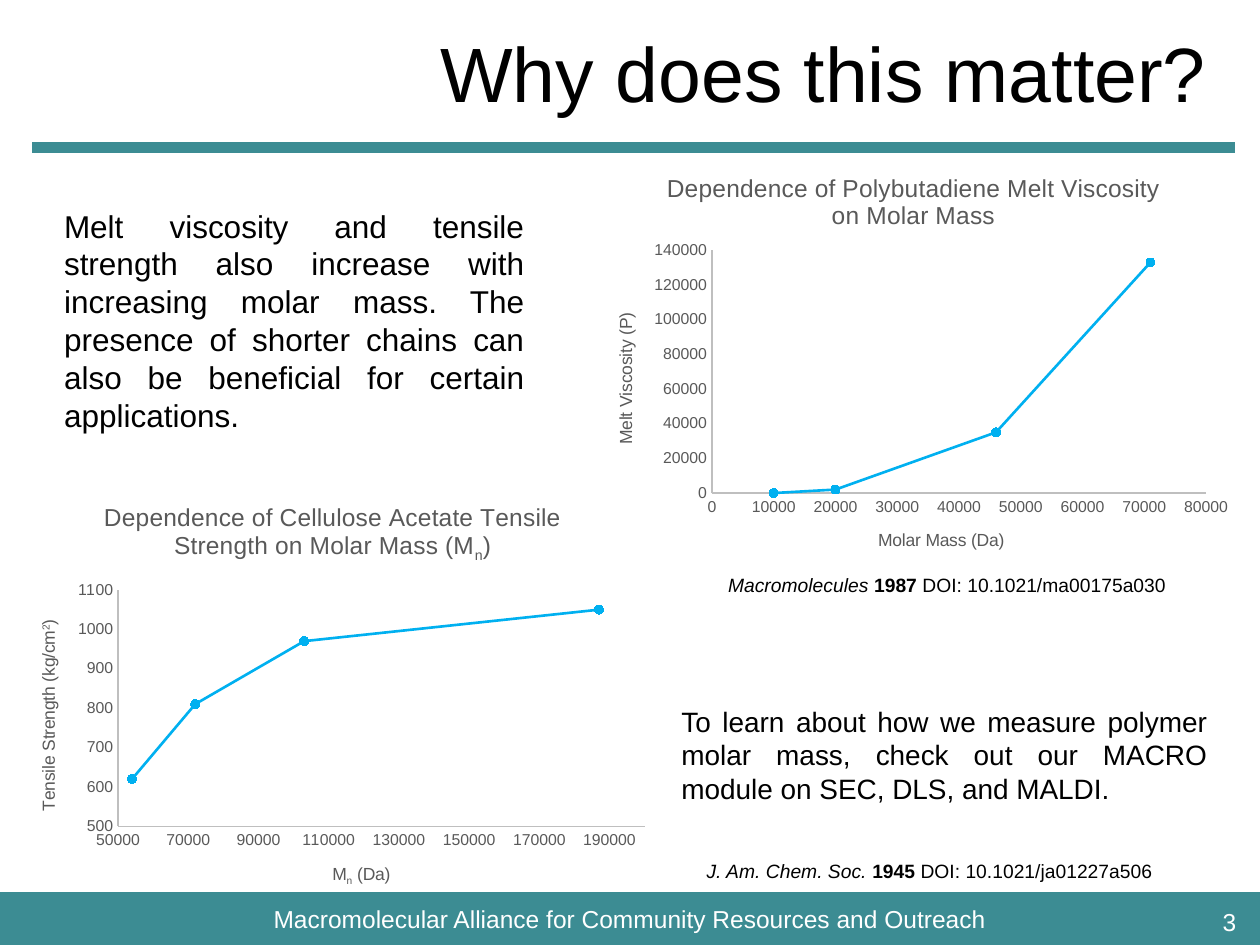
from lxml.etree import SubElement
from pptx import Presentation
from pptx.chart.data import XyChartData
from pptx.dml.color import RGBColor
from pptx.enum.chart import XL_CHART_TYPE as ChartType, XL_MARKER_STYLE as Marker, XL_TICK_MARK as Tick
from pptx.enum.shapes import MSO_CONNECTOR as Connector, MSO_SHAPE as Shape
from pptx.enum.text import MSO_ANCHOR as Anchor, PP_ALIGN as Align
from pptx.oxml.ns import qn
from pptx.util import Inches, Pt

FONT = "Arial"
TEAL, BLUE, GREY, AXIS = "3C8C93", "00B0F0", "595959", "BFBFBF"
BLACK, WHITE = "000000", "FFFFFF"
rgb = RGBColor.from_string

deck = Presentation()
deck.slide_width, deck.slide_height = Inches(10), Inches(7.5)
slide = deck.slides.add_slide(deck.slide_layouts[5])
shapes = slide.shapes


def share(left, top, width, height):
    """Turn percentages of the slide's width and height into lengths."""
    across, down = deck.slide_width / 100, deck.slide_height / 100
    return [round(n) for n in (left * across, top * down, width * across, height * down)]


def add_runs(paragraph, runs, size, color):
    """Add (text, style) runs; style is "", "bold", "italic", "sub" or "super"."""
    for text, style in runs:
        run = paragraph.add_run()
        run.text = text
        font = run.font
        font.name, font.size = FONT, Pt(size)
        font.bold, font.italic = style == "bold", style == "italic"
        font.color.rgb = rgb(color)
        if style in ("sub", "super"):
            font._element.set("baseline", "-25000" if style == "sub" else "30000")


# Title, rule and footer band
title = shapes.title
title.left, title.top, title.width, title.height = share(6.8, 2.27, 90, 10.67)
title.text_frame.vertical_anchor = Anchor.MIDDLE
heading = title.text_frame.paragraphs[0]
heading.alignment = Align.RIGHT
add_runs(heading, [("Why does this matter?", "")], 44, BLACK)

left, top, width, _ = share(2.5, 15.6, 95.5, 0)
rule = shapes.add_connector(Connector.STRAIGHT, left + width, top, left, top)
rule.line.color.rgb = rgb(TEAL)
rule.line.width = Pt(6)
SubElement(rule._element.spPr, qn("a:effectLst"))

footer = shapes.add_shape(Shape.RECTANGLE, *share(0, 94.4, 100, 5.6))
footer.shadow.inherit = False
footer.fill.solid()
footer.fill.fore_color.rgb = rgb(TEAL)
footer.line.fill.background()
footer.text_frame.vertical_anchor = Anchor.MIDDLE
alliance = footer.text_frame.paragraphs[0]
alliance.alignment = Align.CENTER
add_runs(alliance, [("Macromolecular Alliance for Community Resources and Outreach", "")], 14, WHITE)

# Charts: place, title, axis titles, points, x range, y minimum, plot area as shares of the chart
studies = [
    ((0.6, 51.07, 51.6, 45.47),
     [("Dependence of Cellulose Acetate Tensile Strength on Molar Mass (M", ""), ("n", "sub"), (")", "")],
     [("M", ""), ("n", "sub"), (" (Da)", "")],
     [("Tensile Strength (kg/cm", ""), ("2", "super"), (")", "")],
     [(54000, 620), (72000, 810), (103000, 970), (187000, 1050)],
     (50000, 200000, 20000), (500, 1100, 100), (0.17, 0.25, 0.81, 0.55)),
    ((46.7, 16.13, 51.6, 45.07),
     [("Dependence of Polybutadiene Melt Viscosity on Molar Mass", "")],
     [("Molar Mass (Da)", "")],
     [("Melt Viscosity (P)", "")],
     [(10000, 0), (20000, 2000), (46000, 35000), (71000, 133000)],
     (0, 80000, 10000), (0, 140000, 20000), (0.19, 0.23, 0.76, 0.57)),
]
for place, name, x_name, y_name, points, x_scale, y_scale, plot_area in studies:
    data = XyChartData()
    measured = data.add_series("Series 1")
    for x, y in points:
        measured.add_data_point(x, y)
    chart = shapes.add_chart(ChartType.XY_SCATTER_SMOOTH, *share(*place), data).chart
    chart.font.name, chart.font.size = FONT, Pt(10)
    chart.has_legend = False
    add_runs(chart.chart_title.text_frame.paragraphs[0], name, 14, GREY)
    chart.chart_title.include_in_layout = False

    for axis, axis_name, scale in ((chart.category_axis, x_name, x_scale),
                                   (chart.value_axis, y_name, y_scale)):
        axis.minimum_scale, axis.maximum_scale, axis.major_unit = scale
        axis.has_major_gridlines = False
        axis.major_tick_mark = axis.minor_tick_mark = Tick.NONE
        axis.format.line.color.rgb = rgb(AXIS)
        axis.format.line.width = Pt(0.75)
        labels = axis.tick_labels
        labels.font.name, labels.font.size = FONT, Pt(9)
        labels.font.color.rgb = rgb(GREY)
        labels.number_format, labels.number_format_is_linked = "General", False
        add_runs(axis.axis_title.text_frame.paragraphs[0], axis_name, 10, GREY)

    plot = chart.plots[0]
    plot.vary_by_categories = False
    curve = plot.series[0]
    curve.smooth = True
    curve.format.line.color.rgb = rgb(BLUE)
    curve.format.line.width = Pt(1.5)
    curve.marker.style, curve.marker.size = Marker.CIRCLE, 5
    curve.marker.format.fill.solid()
    curve.marker.format.fill.fore_color.rgb = rgb(BLUE)
    curve.marker.format.line.color.rgb = rgb(BLUE)

    area = chart._chartSpace.chart.plotArea
    for old in area.findall(qn("c:layout")):
        area.remove(old)
    layout = SubElement(area, qn("c:layout"))
    area.insert(0, layout)
    manual = SubElement(layout, qn("c:manualLayout"))
    settings = [("layoutTarget", "inner"), ("xMode", "edge"), ("yMode", "edge"),
                *zip("xywh", plot_area)]
    for tag, value in settings:
        SubElement(manual, qn(f"c:{tag}")).set("val", str(value))

# Body text, citations and page number
passages = [
    ((4.1, 21.2, 38.5, 25.6), Align.JUSTIFY, 18, BLACK, True,
     [("Melt viscosity and tensile strength also increase with increasing molar mass. "
       "The presence of shorter chains can also be beneficial for certain applications.", "")]),
    ((53.1, 73.87, 43.7, 12.13), Align.JUSTIFY, 16, BLACK, True,
     [("To learn about how we measure polymer molar mass, check out our MACRO module "
       "on SEC, DLS, and MALDI.", "")]),
    ((56.8, 60, 37, 3.87), Align.LEFT, 11, BLACK, False,
     [("Macromolecules ", "italic"), ("1987", "bold"), (" DOI: 10.1021/ma00175a030", "")]),
    ((55.1, 90.27, 37.6, 3.87), Align.LEFT, 11, BLACK, False,
     [("J. Am. Chem. Soc. ", "italic"), ("1945", "bold"), (" DOI: 10.1021/ja01227a506", "")]),
    ((90.8, 95.33, 8.3, 4.67), Align.RIGHT, 14, WHITE, True, [("3", "")]),
]
for place, alignment, size, color, wraps, runs in passages:
    frame = shapes.add_textbox(*share(*place)).text_frame
    frame.word_wrap = wraps
    frame.paragraphs[0].alignment = alignment
    add_runs(frame.paragraphs[0], runs, size, color)

deck.save("out.pptx")
